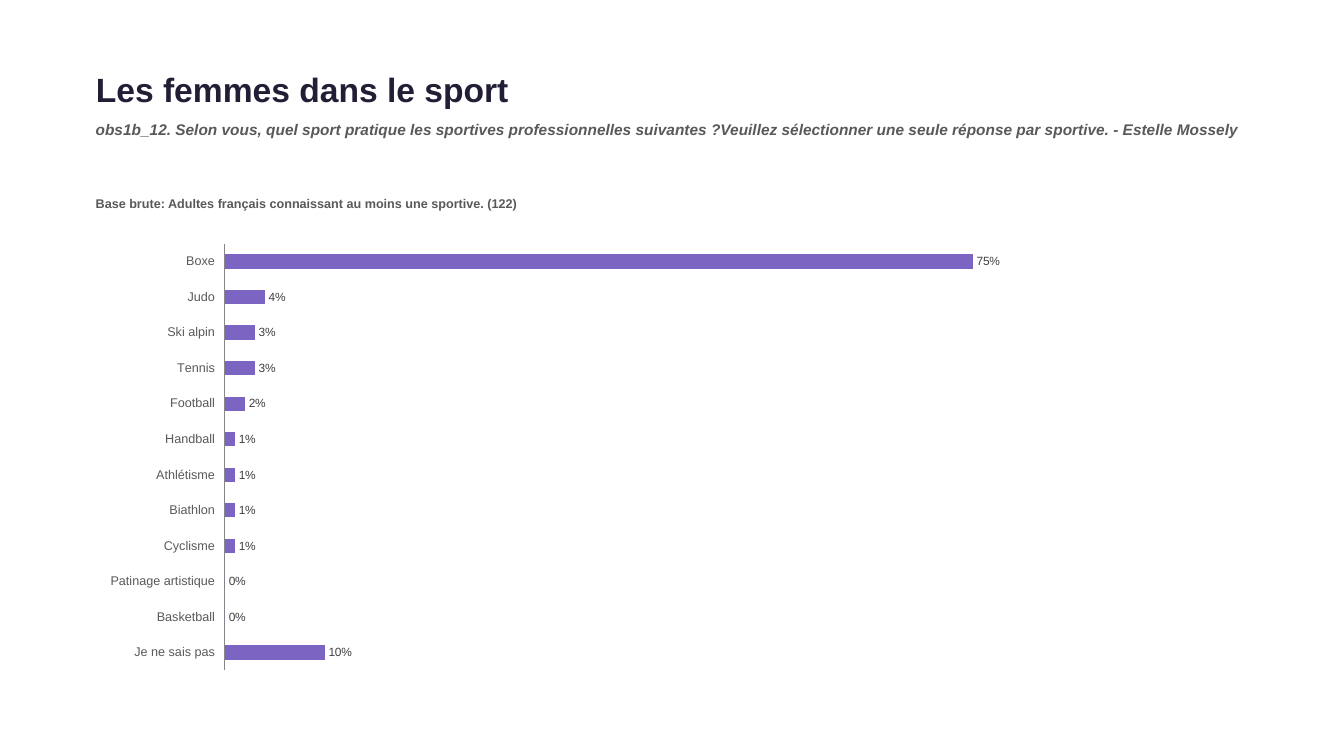
import pptx
import pptx.chart.data
import pptx.dml.color
import pptx.enum.chart
import pptx.enum.text
import pptx.oxml
import pptx.oxml.ns
import pptx.util

RGBColor = pptx.dml.color.RGBColor
NIGHT = RGBColor(0x24, 0x1D, 0x36)
SLATE = RGBColor(0x59, 0x59, 0x59)
CHARCOAL = RGBColor(0x40, 0x40, 0x40)
AXIS_GREY = RGBColor(0x86, 0x86, 0x86)
VIOLET = RGBColor(0x7C, 0x64, 0xC3)

LEFT, WIDTH = 6.38, 87.25
PLOT_SHARES = {"x": 0.12, "y": 0.02, "w": 0.86, "h": 0.96}
SPORTS = {
    "Je ne sais pas": 0.10,
    "Basketball": 0,
    "Patinage artistique": 0,
    "Cyclisme": 0.01,
    "Biathlon": 0.01,
    "Athlétisme": 0.01,
    "Handball": 0.01,
    "Football": 0.02,
    "Tennis": 0.03,
    "Ski alpin": 0.03,
    "Judo": 0.04,
    "Boxe": 0.75,
}


def apply(target, values):
    """Set every attribute named in a dict of format values."""
    for name, value in values.items():
        setattr(target, name, value)


class SurveyPage:
    """Style and current slide, with lengths in percent of the slide's size."""

    typeface = "Arial"

    def __init__(self, deck):
        """Add a title-only slide to the deck."""
        self.deck = deck
        self.page = deck.slides.add_slide(deck.slide_layouts[5])

    def place(self, left, top, width, height):
        """Turn percentages of the slide into lengths."""
        across, down = self.deck.slide_width, self.deck.slide_height
        shares = (left, across), (top, down), (width, across), (height, down)
        return [pptx.util.Emu(round(share * full / 100)) for share, full in shares]

    def style(self, font, size, color, **extra):
        """Format a font in the page's typeface."""
        apply(font, {"name": self.typeface, "size": pptx.util.Pt(size), **extra})
        font.color.rgb = color

    def fill_text(self, box, text, size, color, anchor, **extra):
        """Fill a box with one left-aligned paragraph."""
        apply(box.text_frame, {
            "word_wrap": True,
            "vertical_anchor": anchor,
            "margin_left": pptx.util.Inches(0.1),
            "margin_right": pptx.util.Inches(0.1),
            "margin_top": pptx.util.Inches(0.05),
            "margin_bottom": pptx.util.Inches(0.05),
        })
        para = box.text_frame.paragraphs[0]
        para.alignment = pptx.enum.text.PP_ALIGN.LEFT
        span = para.add_run()
        span.text = text
        self.style(span.font, size, color, **extra)

    def title(self, text, area):
        """Move and format the title placeholder."""
        box = self.page.shapes.title
        apply(box, dict(zip(("left", "top", "width", "height"), self.place(*area))))
        box.text_frame.auto_size = pptx.enum.text.MSO_AUTO_SIZE.SHAPE_TO_FIT_TEXT
        self.fill_text(box, text, 24, NIGHT, pptx.enum.text.MSO_ANCHOR.MIDDLE, bold=True)

    def caption(self, text, area, size, **extra):
        """Add a bold grey text box."""
        box = self.page.shapes.add_textbox(*self.place(*area))
        self.fill_text(box, text, size, SLATE, pptx.enum.text.MSO_ANCHOR.TOP, bold=True, **extra)

    def bars(self, values, area):
        """Add a horizontal bar chart of percentages."""
        data = pptx.chart.data.CategoryChartData()
        data.categories = list(values)
        data.add_series("Series 1", list(values.values()))
        kind = pptx.enum.chart.XL_CHART_TYPE.BAR_CLUSTERED
        chart = self.page.shapes.add_chart(kind, *self.place(*area), data).chart
        apply(chart, {"has_legend": False, "has_title": False})
        apply(chart.font, {"name": self.typeface, "size": pptx.util.Pt(18)})
        self.axes(chart)
        self.series(chart.plots[0])
        self.fix_plot(chart)

    def axes(self, chart):
        """Show the category axis and hide the value axis."""
        no_tick = pptx.enum.chart.XL_TICK_MARK.NONE
        apply(chart.category_axis, {
            "major_tick_mark": no_tick,
            "minor_tick_mark": no_tick,
            "tick_label_position": pptx.enum.chart.XL_TICK_LABEL_POSITION.LOW,
            "has_major_gridlines": False,
        })
        line = chart.category_axis.format.line
        line.color.rgb = AXIS_GREY
        line.width = pptx.util.Pt(0.75)
        self.style(chart.category_axis.tick_labels.font, 9, SLATE)
        apply(chart.value_axis, {
            "minimum_scale": 0,
            "maximum_scale": 1,
            "major_unit": 0.1,
            "has_major_gridlines": False,
            "visible": False,
        })

    def series(self, plot):
        """Colour and label the bars."""
        apply(plot, {"gap_width": 150, "overlap": -10, "vary_by_categories": False,
                     "has_data_labels": True})
        fill = plot.series[0].format.fill
        fill.solid()
        fill.fore_color.rgb = VIOLET
        labels = plot.data_labels
        apply(labels, {
            "show_value": True,
            "position": pptx.enum.chart.XL_LABEL_POSITION.OUTSIDE_END,
            "number_format": "0%",
            "number_format_is_linked": False,
        })
        self.style(labels.font, 8.5, CHARCOAL)

    def fix_plot(self, chart):
        """Hold the inner plot area at fixed shares of the chart."""
        area = chart.element.find(".//" + pptx.oxml.ns.qn("c:plotArea"))
        for layout in area.findall(pptx.oxml.ns.qn("c:layout")):
            area.remove(layout)
        modes = "".join(f'<c:{side}Mode val="edge"/>' for side in "xy")
        sizes = "".join(f'<c:{side} val="{share}"/>' for side, share in PLOT_SHARES.items())
        area.insert(0, pptx.oxml.parse_xml(
            f'<c:layout {pptx.oxml.ns.nsdecls("c")}><c:manualLayout>'
            f'<c:layoutTarget val="inner"/>{modes}{sizes}</c:manualLayout></c:layout>'))


def main():
    """Build the survey slide."""
    deck = pptx.Presentation()
    apply(deck, {"slide_width": pptx.util.Inches(13.33), "slide_height": pptx.util.Inches(7.5)})
    survey = SurveyPage(deck)
    survey.title("Les femmes dans le sport", (LEFT, 8.4, WIDTH, 6.67))
    survey.caption(
        "obs1b_12. Selon vous, quel sport pratique les sportives professionnelles suivantes ?"
        "Veuillez sélectionner une seule réponse par sportive. - Estelle Mossely",
        (LEFT, 15.2, WIDTH, 10), 11, italic=True)
    survey.caption("Base brute: Adultes français connaissant au moins une sportive. (122)",
                   (LEFT, 25.2, WIDTH, 5.87), 9)
    survey.bars(SPORTS, (LEFT, 31.07, 86.27, 58.8))
    deck.save("out.pptx")


if __name__ == "__main__":
    main()
